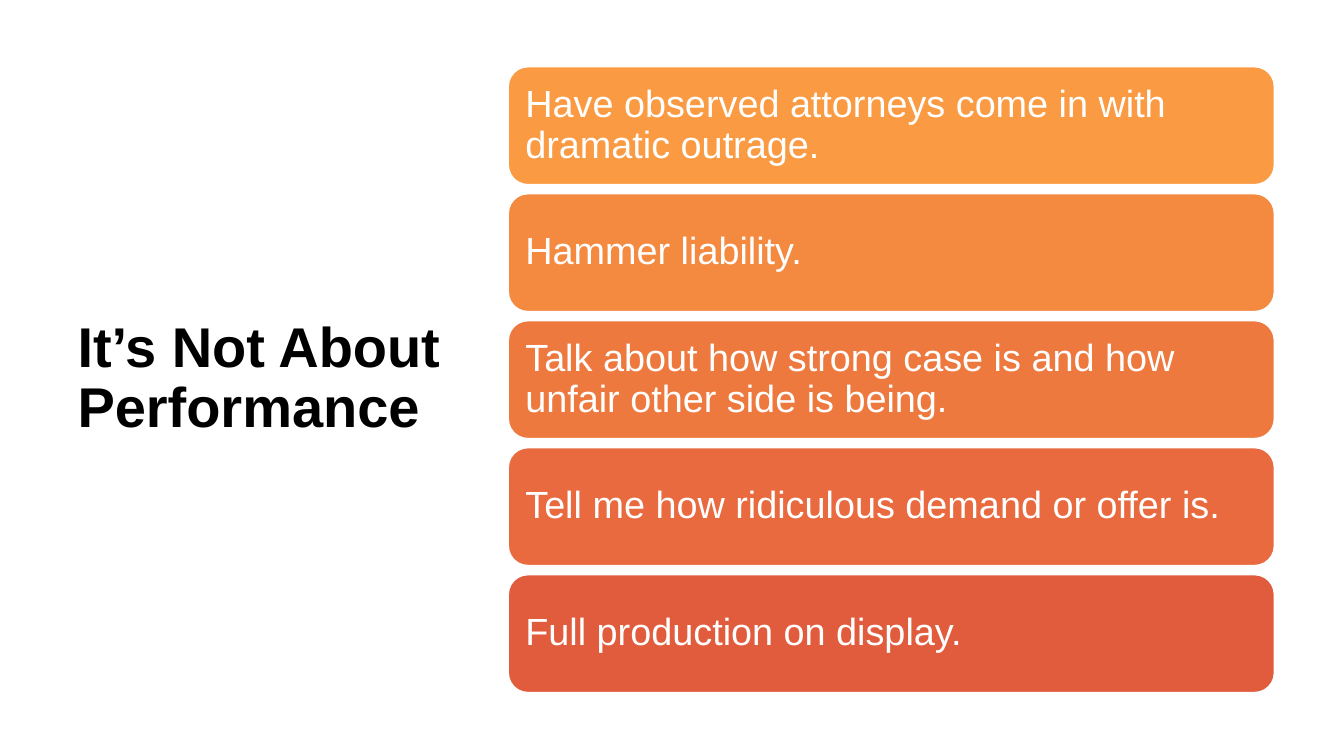
"""Build the slide on performance with its column of five cards."""
from dataclasses import dataclass

from pptx import Presentation
from pptx.dml.color import RGBColor
from pptx.enum import shapes, text
from pptx.slide import Slide
from pptx.text.text import TextFrame
from pptx.util import Pt


@dataclass(frozen=True)
class Theme:
    face: str = "Arial"
    ink: str = "000000"
    paper: str = "FFFFFF"
    head: float = 40
    body: float = 27
    lead: float = 0.9


@dataclass(frozen=True)
class Card:
    label: str
    fill: str


THEME = Theme()
LEFT, TOP, WIDTH, HEIGHT, PITCH = 363.1, 47.7, 547.2, 84.2, 90.7
INSET = 8.1
CARDS = (
    Card("Have observed attorneys come in with dramatic outrage.", "FA9A42"),
    Card("Hammer liability.", "F48940"),
    Card("Talk about how strong case is and how unfair other side is being.", "EE793F"),
    Card("Tell me how ridiculous demand or offer is.", "E86A3E"),
    Card("Full production on display.", "E15C3D"),
)


def write(frame: TextFrame, label: str, size: float, tint: str, bold: bool = False) -> None:
    frame.text = label
    frame.word_wrap = True
    frame.auto_size = text.MSO_AUTO_SIZE.NONE
    frame.vertical_anchor = text.MSO_ANCHOR.MIDDLE
    para = frame.paragraphs[0]
    para.alignment = text.PP_ALIGN.LEFT
    para.line_spacing = THEME.lead
    font = para.font
    font.name, font.size, font.bold = THEME.face, Pt(size), bold
    font.color.rgb = RGBColor.from_string(tint)


def draw_title(slide: Slide, label: str) -> None:
    title = slide.shapes.title
    title.left, title.top = Pt(48.2), Pt(43.2)
    title.width, title.height = Pt(275), Pt(455.8)
    write(title.text_frame, label, THEME.head, THEME.ink, bold=True)


def draw_card(slide: Slide, card: Card, top: float) -> None:
    box = slide.shapes.add_shape(
        shapes.MSO_SHAPE.ROUNDED_RECTANGLE, Pt(LEFT), Pt(top), Pt(WIDTH), Pt(HEIGHT)
    )
    box.shadow.inherit = False
    box.fill.solid()
    box.fill.fore_color.rgb = RGBColor.from_string(card.fill)
    box.line.color.rgb = RGBColor.from_string(THEME.paper)
    box.line.width = Pt(1)
    frame = box.text_frame
    frame.margin_left = frame.margin_right = Pt(INSET)
    frame.margin_top = frame.margin_bottom = Pt(INSET)
    write(frame, card.label, THEME.body, THEME.paper)


def main() -> None:
    deck = Presentation()
    deck.slide_width, deck.slide_height = Pt(960), Pt(540)
    slide = deck.slides.add_slide(deck.slide_layouts[5])
    draw_title(slide, "It’s Not About Performance")
    for row, card in enumerate(CARDS):
        draw_card(slide, card, TOP + row * PITCH)
    deck.save("out.pptx")


if __name__ == "__main__":
    main()
